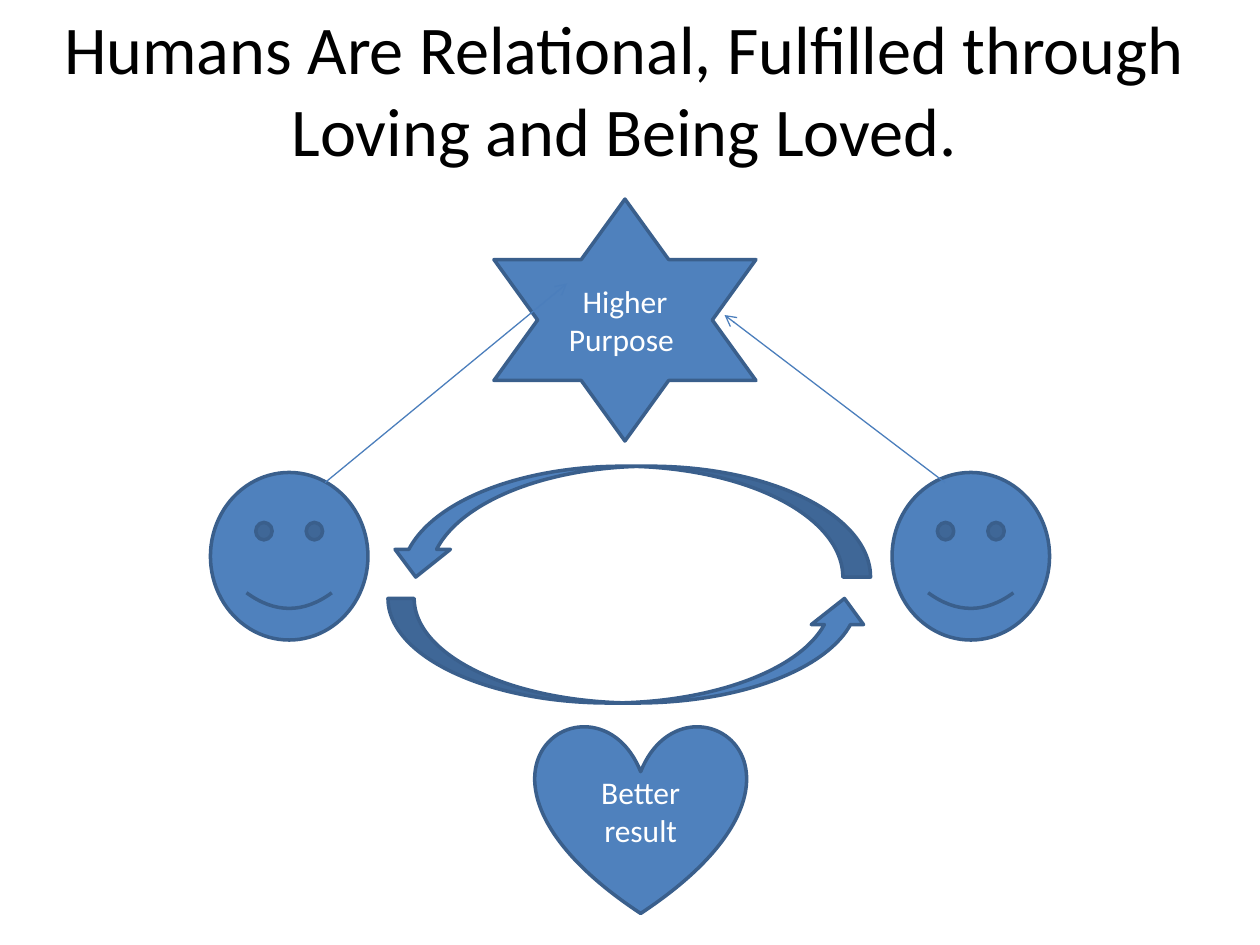
import pptx
import pptx.util
import pptx.dml.color
import pptx.enum.shapes
import pptx.enum.text
import pptx.oxml.ns
import lxml.etree

Inches = pptx.util.Inches
Shape = pptx.enum.shapes.MSO_SHAPE
qn = pptx.oxml.ns.qn


def paint(color_format, hex_color):
    color_format.rgb = pptx.dml.color.RGBColor.from_string(hex_color)


def write(frame, text, size, hex_color):
    frame.word_wrap = True
    paragraph = frame.paragraphs[0]
    paragraph.alignment = pptx.enum.text.PP_ALIGN.CENTER
    run = paragraph.add_run()
    run.text = text
    run.font.size = pptx.util.Pt(size)
    run.font.name = "Calibri"
    paint(run.font.color, hex_color)


prs = pptx.Presentation()
prs.slide_width, prs.slide_height = Inches(10), Inches(7.5)
slide = prs.slides.add_slide(prs.slide_layouts[6])

# Giving cycle, two people, purpose star
figures = [
    (Shape.CURVED_UP_ARROW, 3.08, 4.75, 3.83, 0.83, "", False),
    (Shape.CURVED_DOWN_ARROW, 3.08, 3.7, 3.83, 0.88, "", True),
    (Shape.SMILEY_FACE, 1.67, 3.75, 1.25, 1.33, "", False),
    (Shape.SMILEY_FACE, 7.08, 3.75, 1.25, 1.33, "", False),
    (Shape.STAR_6_POINT, 3.92, 1.58, 2.08, 1.92, "Higher Purpose ", False),
    (Shape.HEART, 4.25, 5.75, 1.67, 1.5, "Better result", False),
]
for kind, left, top, width, height, label, mirrored in figures:
    figure = slide.shapes.add_shape(
        kind, Inches(left), Inches(top), Inches(width), Inches(height))
    figure.shadow.inherit = False
    figure.fill.solid()
    paint(figure.fill.fore_color, "4F81BD")
    paint(figure.line.color, "3A5F8C")
    figure.line.width = pptx.util.Pt(2)
    if mirrored:
        figure._element.spPr.find(qn("a:xfrm")).set("flipH", "1")
    if label:
        figure.text_frame.vertical_anchor = pptx.enum.text.MSO_ANCHOR.MIDDLE
        write(figure.text_frame, label, 18, "FFFFFF")

# Arrows from each person up to the purpose
for x1, y1, x2, y2 in [(2.58, 3.83, 4.5, 2.25), (7.5, 3.83, 5.75, 2.5)]:
    aim = slide.shapes.add_connector(
        pptx.enum.shapes.MSO_CONNECTOR.STRAIGHT,
        Inches(x1), Inches(y1), Inches(x2), Inches(y2))
    paint(aim.line.color, "4B7EBC")
    aim.line.width = pptx.util.Pt(0.75)
    lxml.etree.SubElement(aim.line._get_or_add_ln(), qn("a:tailEnd"), type="arrow")
    lxml.etree.SubElement(aim._element.spPr, qn("a:effectLst"))

# Title
title = slide.shapes.add_textbox(Inches(0.33), Inches(0), Inches(9.25), Inches(1.79))
write(title.text_frame,
      "Humans Are Relational, Fulfilled through Loving and Being Loved.",
      39, "000000")

prs.save("out.pptx")
